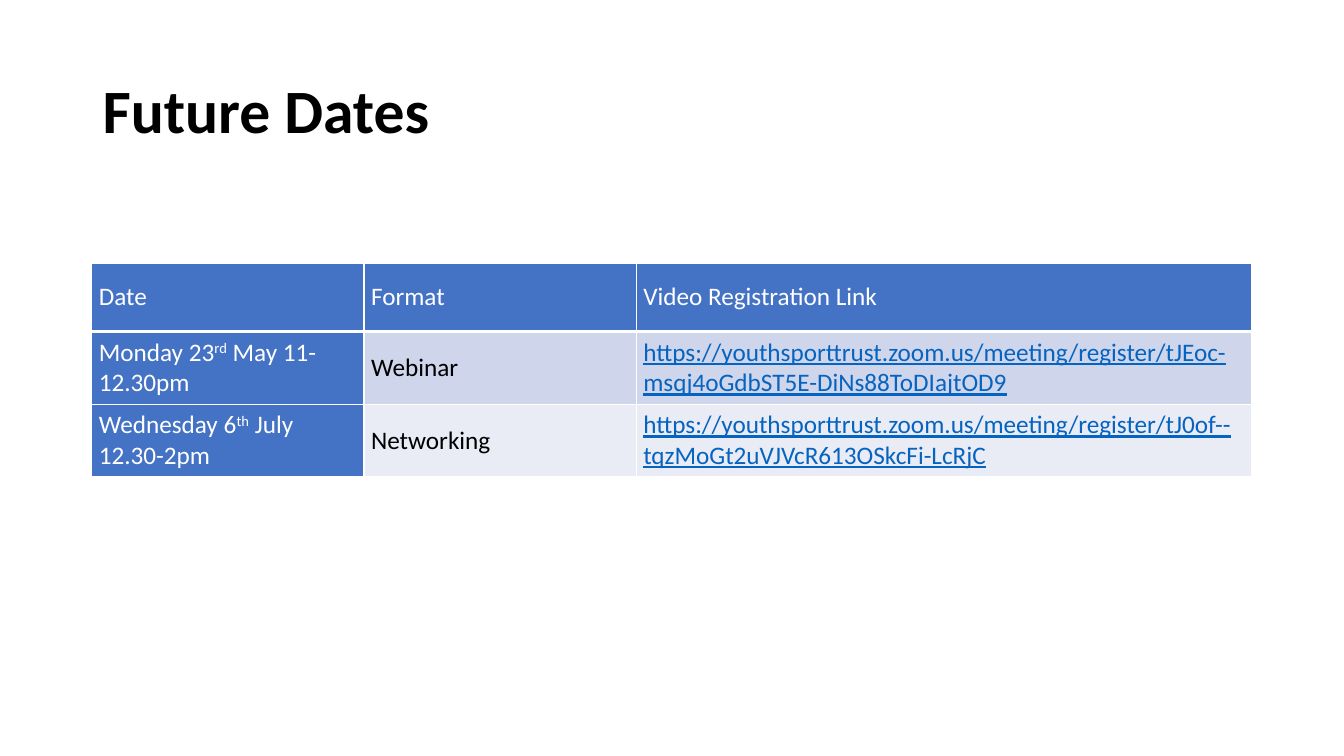
from lxml import etree
from pptx import Presentation
from pptx.dml.color import RGBColor
from pptx.enum.text import MSO_ANCHOR
from pptx.oxml.ns import qn
from pptx.util import Inches, Pt

MIDDLE = MSO_ANCHOR.MIDDLE
WHITE, BLACK, BLUE, LINK = "FFFFFF", "000000", "4472C4", "0563C1"
BANDS = ("CFD5EA", "E9EBF5")
HEADINGS = ("Date", "Format", "Video Registration Link")
SESSIONS = (
    (("Monday 23", "rd", " May 11-12.30pm"), "Webinar",
     "https://youthsporttrust.zoom.us/meeting/register/tJEoc-msqj4oGdbST5E-DiNs88ToDIajtOD9"),
    (("Wednesday 6", "th", " July 12.30-2pm"), "Networking",
     "https://youthsporttrust.zoom.us/meeting/register/tJ0of--tqzMoGt2uVJVcR613OSkcFi-LcRjC"),
)


def color(value):
    return RGBColor.from_string(value)


class SlideBuilder:
    """Hold the style and current slide, and add its elements."""

    font = "Calibri"
    title_size = 44
    body_size = 18

    def __init__(self, deck):
        self.width, self.height = deck.slide_width, deck.slide_height
        self.page = deck.slides.add_slide(deck.slide_layouts[6])

    def place(self, left, top, width, height):
        return (round(left * self.width), round(top * self.height),
                round(width * self.width), round(height * self.height))

    def span(self, para, text, size, ink, bold=False, underline=False, raised=False):
        span = para.add_run()
        span.text = text
        font = span.font
        font.name, font.size, font.bold = self.font, Pt(size), bold
        font.underline = underline
        font.color.rgb = color(ink)
        if raised:
            span._r.get_or_add_rPr().set("baseline", "30000")

    def title(self, text, area):
        box = self.page.shapes.add_textbox(*self.place(*area))
        frame = box.text_frame
        frame.word_wrap = True
        frame.vertical_anchor = MIDDLE
        para = frame.paragraphs[0]
        para.line_spacing = 0.9
        self.span(para, text, self.title_size, BLACK, bold=True)

    def borders(self, cell, top, bottom):
        properties = cell._tc.get_or_add_tcPr()
        for side, points in (("L", 1), ("R", 1), ("T", top), ("B", bottom)):
            line = etree.SubElement(properties, qn(f"a:ln{side}"), w=str(Pt(points)))
            fill = etree.SubElement(line, qn("a:solidFill"))
            etree.SubElement(fill, qn("a:srgbClr"), val=WHITE)

    def cell(self, cell, parts, fill, ink, underline=False, top=1, bottom=1):
        cell.vertical_anchor = MIDDLE
        cell.margin_left = cell.margin_right = Inches(0.07)
        cell.margin_top = cell.margin_bottom = 0
        self.borders(cell, top, bottom)
        cell.fill.solid()
        cell.fill.fore_color.rgb = color(fill)
        para = cell.text_frame.paragraphs[0]
        for index, text in enumerate(parts):
            self.span(para, text, self.body_size, ink,
                      underline=underline, raised=index == 1)

    def schedule(self, headings, sessions, area, columns, rows):
        table = self.page.shapes.add_table(
            len(rows), len(columns), *self.place(*area)).table
        for column, width in zip(table.columns, columns):
            column.width = Inches(width)
        for row, height in zip(table.rows, rows):
            row.height = Inches(height)
        for index, heading in enumerate(headings):
            self.cell(table.cell(0, index), [heading], BLUE, WHITE, bottom=3)
        for row, (date, kind, link) in enumerate(sessions, 1):
            band = BANDS[row - 1]
            top = 3 if row == 1 else 1
            self.cell(table.cell(row, 0), date, BLUE, WHITE, top=top)
            self.cell(table.cell(row, 1), [kind], band, BLACK, top=top)
            self.cell(table.cell(row, 2), [link], band, LINK, underline=True, top=top)


def main():
    deck = Presentation()
    deck.slide_width, deck.slide_height = Inches(13.33), Inches(7.5)
    slide = SlideBuilder(deck)
    slide.title("Future Dates", (0.069, 0.053, 0.863, 0.193))
    slide.schedule(HEADINGS, SESSIONS, (0.0683, 0.348, 0.863, 0.283),
                   columns=(2.7, 2.7, 6.1), rows=(0.68, 0.72, 0.72))
    deck.save("out.pptx")


if __name__ == "__main__":
    main()
